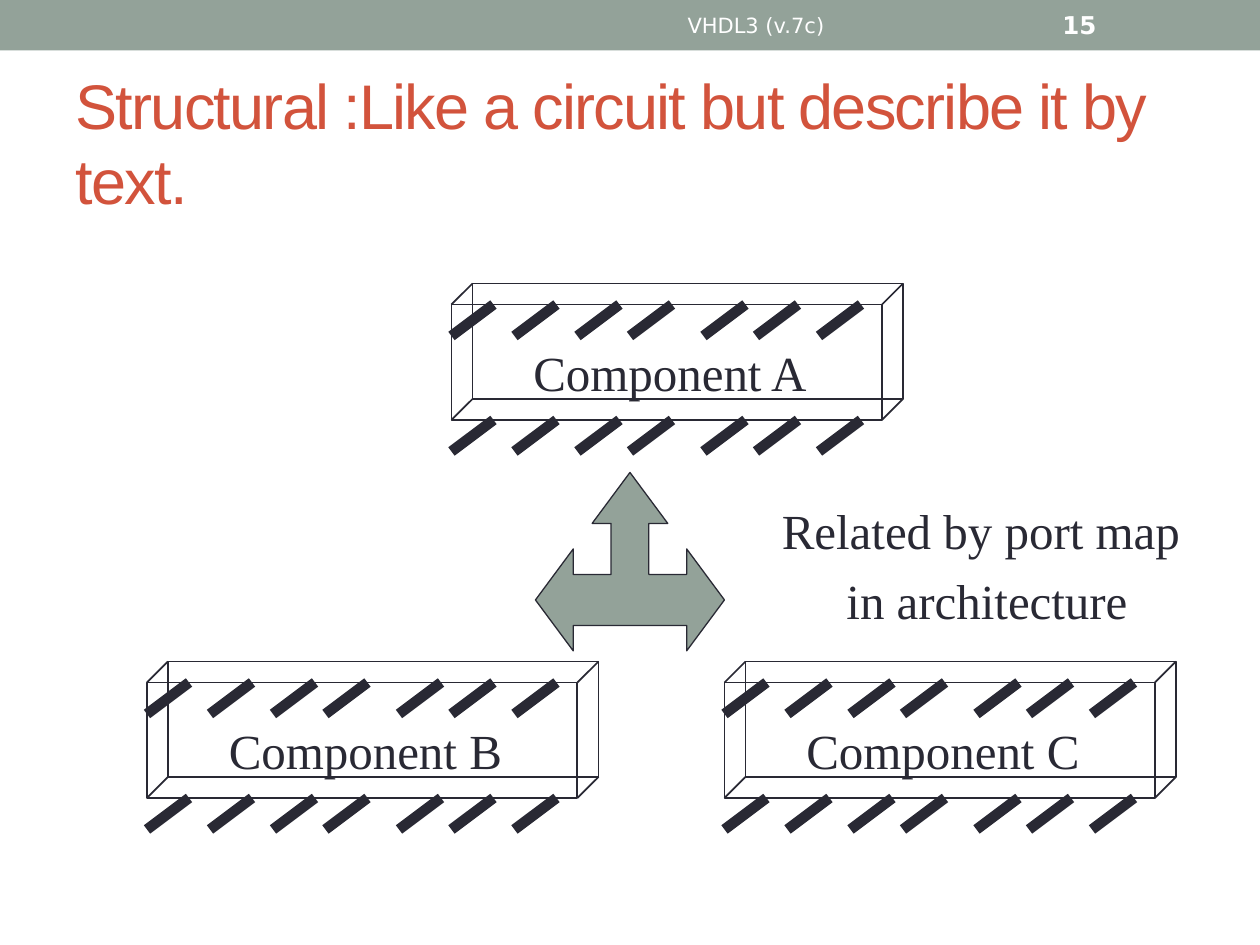
from lxml import etree
from pptx import Presentation, util as u
from pptx.dml.color import RGBColor
from pptx.enum import shapes, text
from pptx.oxml.ns import qn

CELL = u.Inches(1) / 12  # the slide is a grid of 120 columns by 90 rows
INK, SAGE, RUST, WHITE = "292934", "93A299", "D2533C", "FFFFFF"
SERIF, SANS = "Times New Roman", "DejaVu Sans"
PIN_COLUMNS = (0, 6, 12, 17, 24, 29, 35)
PIN_WIDTH, PIN_HEIGHT = 4, 3
BOX_WIDTH, BOX_HEIGHT, BOX_DEPTH = 41, 11, 2


def cells(*counts):
    """Turn grid counts into slide lengths."""
    return [u.Emu(round(count * CELL)) for count in counts]


def colour(value):
    return RGBColor.from_string(value)


def style_shape(shape, fill=None, line=None, width=1):
    shape.shadow.inherit = False
    if fill:
        shape.fill.solid()
        shape.fill.fore_color.rgb = colour(fill)
    else:
        shape.fill.background()
    if line:
        shape.line.color.rgb = colour(line)
        shape.line.width = u.Pt(width)
    else:
        shape.line.fill.background()


def style_text(frame, font, size, ink, align, bold=False, before=0):
    frame.vertical_anchor = text.MSO_ANCHOR.MIDDLE
    for paragraph in frame.paragraphs:
        paragraph.alignment = align
        paragraph.space_before = u.Pt(before)
        for run in paragraph.runs:
            run.font.name, run.font.size, run.font.bold = font, u.Pt(size), bold
            run.font.color.rgb = colour(ink)


def add_text(slide, box, words, font, size, ink, align=text.PP_ALIGN.CENTER,
             wrap=True, **options):
    frame = slide.shapes.add_textbox(*cells(*box)).text_frame
    frame.word_wrap = wrap
    frame.text = words
    style_text(frame, font, size, ink, align, **options)


def add_line(slide, start, end, width):
    line = slide.shapes.add_connector(
        shapes.MSO_CONNECTOR.STRAIGHT, *cells(*start, *end))
    line.line.color.rgb = colour(INK)
    line.line.width = u.Pt(width)
    etree.SubElement(line._element.spPr, qn("a:effectLst"))


def add_header(slide, box):
    left, top, width, height = box
    band = slide.shapes.add_shape(shapes.MSO_SHAPE.RECTANGLE, *cells(*box))
    style_shape(band, SAGE)
    row = top + 0.05 * height, 0.9 * height
    add_text(slide, (left + 0.375 * width, row[0], 0.45 * width, row[1]),
             "VHDL3 (v.7c)", SANS, 12, WHITE)
    add_text(slide, (left + 100, row[0], 14, row[1]),
             "15", SANS, 14, WHITE, text.PP_ALIGN.LEFT, bold=True)


def set_title(slide, box, words):
    title = slide.shapes.title
    title.left, title.top, title.width, title.height = cells(*box)
    frame = title.text_frame
    frame.text = words
    frame.auto_size = text.MSO_AUTO_SIZE.NONE
    style_text(frame, "Arial", 36, RUST, text.PP_ALIGN.LEFT)
    frame.paragraphs[0].runs[0].font._element.set("spc", "-100")


def add_component(slide, left, top, name):
    """Draw a wireframe chip with a row of pins on each long side."""
    for shift in (BOX_DEPTH, 0):
        face = slide.shapes.add_shape(
            shapes.MSO_SHAPE.RECTANGLE,
            *cells(left + shift, top - shift, BOX_WIDTH, BOX_HEIGHT))
        style_shape(face, line=INK)
    for x in (left, left + BOX_WIDTH):
        for y in (top, top + BOX_HEIGHT):
            add_line(slide, (x, y), (x + BOX_DEPTH, y - BOX_DEPTH), 1)
    for y in (top + BOX_HEIGHT, top):
        for column in PIN_COLUMNS:
            x = left + column
            add_line(slide, (x + PIN_WIDTH, y), (x, y + PIN_HEIGHT), 6)
    add_text(slide, (left + 6.5, top + 3, 28.6, 6.8), name, SERIF, 28, INK,
             wrap=False, before=6.5)


def add_three_way_arrow(slide, box):
    """Draw the arrow on 10 by 7 steps, mirroring its left half."""
    left, top, width, height = box
    half = [(5, 0), (3, 2), (4, 2), (4, 4), (2, 4), (2, 3), (0, 5), (2, 7), (2, 6)]
    outline = half + [(10 - x, y) for x, y in reversed(half[1:])]
    points = [cells(left + x * width / 10, top + y * height / 7) for x, y in outline]
    builder = slide.shapes.build_freeform(*points[0])
    builder.add_line_segments(points[1:], close=True)
    style_shape(builder.convert_to_shape(), SAGE, INK, 0.75)


def main():
    presentation = Presentation()
    presentation.slide_width, presentation.slide_height = cells(120, 90)
    slide = presentation.slides.add_slide(presentation.slide_layouts[5])
    add_header(slide, (0, 0, 120, 4.8))
    set_title(slide, (6, 7, 108, 13),
              "Structural :Like a circuit but describe it by text.")
    for left, top, letter in ((43, 29, "A"), (14, 65, "B"), (69, 65, "C")):
        add_component(slide, left, top, f"Component {letter}")
    add_three_way_arrow(slide, (51, 45, 18, 17))
    add_text(slide, (72, 47, 44, 13.6), "Related by port map \nin architecture",
             SERIF, 28, INK, before=6.5)
    presentation.save("out.pptx")


if __name__ == "__main__":
    main()
